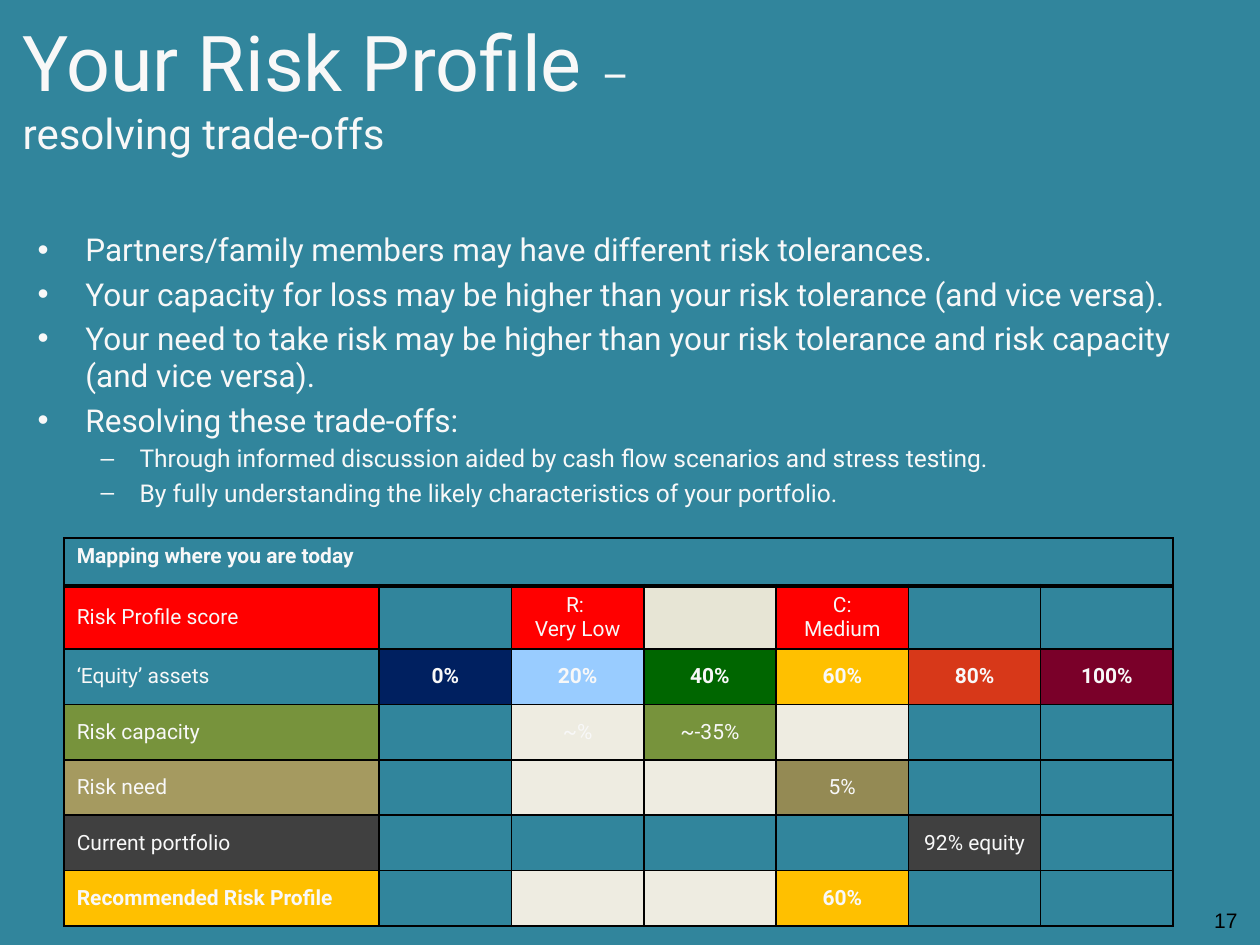
"""Build the risk profile slide with its bullets and mapping table."""
from lxml.etree import SubElement as Sub
from pptx import Presentation
from pptx.dml.color import RGBColor as Rgb
from pptx.enum.text import MSO_ANCHOR as Anchor, MSO_AUTO_SIZE as Auto, PP_ALIGN as Align
from pptx.oxml.ns import qn
from pptx.util import Inches, Pt

HUES = {
    "back": "31859C", "text": "F8F8F8", "black": "000000", "red": "FF0000",
    "sand": "E7E5D5", "cream": "EEECE1", "navy": "002060", "sky": "99CCFF",
    "green": "006600", "gold": "FFC000", "rust": "D73819", "wine": "7A0029",
    "moss": "77933C", "khaki": "A59A60", "olive": "948A54", "gray": "404040",
}

POINTS = [
    (0, "Partners/family members may have different risk tolerances."),
    (0, "Your capacity for loss may be higher than your risk tolerance (and vice versa)."),
    (0, "Your need to take risk may be higher than your risk tolerance and risk capacity (and vice versa)."),
    (0, "Resolving these trade-offs:"),
    (1, "Through informed discussion aided by cash flow scenarios and stress testing."),
    (1, "By fully understanding the likely characteristics of your portfolio."),
]
LEVELS = [("•", 0.38, 0.38, 18), ("–", 0.81, 0.31, 14)]

HEAD = "Mapping where you are today"
BOLD = {HEAD, "Recommended Risk Profile", "0%", "20%", "40%", "60%", "80%", "100%"}
NONE, CREAM = ("", None), ("", "cream")
ROWS = [
    [(HEAD, None)] + [NONE] * 6,
    [("Risk Profile score", "red"), NONE, ("R: \nVery Low", "red"), ("", "sand"),
     ("C:\nMedium", "red"), NONE, NONE],
    [("‘Equity’ assets", None), ("0%", "navy"), ("20%", "sky"), ("40%", "green"),
     ("60%", "gold"), ("80%", "rust"), ("100%", "wine")],
    [("Risk capacity", "moss"), NONE, ("~%", "cream"), ("~-35%", "moss"), CREAM, NONE, NONE],
    [("Risk need", "khaki"), NONE, CREAM, CREAM, ("5%", "olive"), NONE, NONE],
    [("Current portfolio", "gray"), NONE, NONE, NONE, NONE, ("92% equity", "gray"), NONE],
    [("Recommended Risk Profile", "gold"), NONE, CREAM, CREAM, ("60%", "gold"), NONE, NONE],
]
WIDTHS = [2.5] + [1.05] * 6
HEIGHTS = [0.38, 0.43] + [0.44] * 5


def write(par, text, size=12, font="Roboto", hue="text", bold=False, align=Align.LEFT):
    """Add a formatted run to a paragraph."""
    par.alignment = align
    run = par.add_run()
    run.text = text
    run.font.size, run.font.name, run.font.bold = Pt(size), font, bold
    run.font.color.rgb = Rgb.from_string(HUES[hue])


class Deck:
    """Hold the style and the current slide."""

    def __init__(self):
        """Start a deck with one title-only slide."""
        self.show = Presentation()
        self.show.slide_width, self.show.slide_height = Inches(10), Inches(7.5)
        self.slide = self.show.slides.add_slide(self.show.slide_layouts[5])
        self.paint(self.slide.background.fill, "back")

    def paint(self, fill, hue):
        """Fill with a named colour, or with none."""
        if hue:
            fill.solid()
            fill.fore_color.rgb = Rgb.from_string(HUES[hue])
        else:
            fill.background()

    def title(self, parts, x, y, w, h):
        """Place the title and write its (text, size) parts."""
        shape = self.slide.shapes.title
        shape.left, shape.top, shape.width, shape.height = map(Inches, (x, y, w, h))
        frame = shape.text_frame
        frame.auto_size, frame.vertical_anchor = Auto.NONE, Anchor.MIDDLE
        for text, size in parts:
            write(frame.paragraphs[0], text, size=size)

    def box(self, x, y, w, h):
        """Add a wrapping text box and return its frame."""
        frame = self.slide.shapes.add_textbox(*map(Inches, (x, y, w, h))).text_frame
        frame.word_wrap = True
        return frame

    def bullets(self, points, x, y, w, h):
        """Add a list of (level, text) points."""
        frame = self.box(x, y, w, h)
        for i, (level, text) in enumerate(points):
            par = frame.add_paragraph() if i else frame.paragraphs[0]
            mark, left, hang, size = LEVELS[level]
            par.level, par.space_before = level, Pt(size * 0.2)
            write(par, text, size=size)
            props = par._p.get_or_add_pPr()
            props.set("marL", str(Inches(left)))
            props.set("indent", str(-Inches(hang)))
            Sub(props, qn("a:buFont"), typeface="Arial")
            Sub(props, qn("a:buChar"), char=mark)

    def number(self, text, x, y, w, h):
        """Add the page number."""
        frame = self.box(x, y, w, h)
        frame.vertical_anchor = Anchor.MIDDLE
        write(frame.paragraphs[0], text, font="Arial", hue="black", align=Align.RIGHT)

    def edge(self, cell, **sizes):
        """Draw black cell borders of the given point sizes."""
        props = cell._tc.get_or_add_tcPr()
        for side in "LRTB":
            line = Sub(props, qn("a:ln" + side), w=str(Pt(sizes.get(side, 1))))
            Sub(Sub(line, qn("a:solidFill")), qn("a:srgbClr"), val=HUES["black"])

    def table(self, rows, x, y):
        """Add the mapping table with a merged heading row."""
        size = map(Inches, (x, y, sum(WIDTHS), sum(HEIGHTS)))
        grid = self.slide.shapes.add_table(len(rows), len(WIDTHS), *size).table
        grid.first_row = grid.horz_banding = False
        for col, width in zip(grid.columns, WIDTHS):
            col.width = Inches(width)
        for row, height in zip(grid.rows, HEIGHTS):
            row.height = Inches(height)
        for r, row in enumerate(rows):
            for c, (text, hue) in enumerate(row):
                cell = grid.cell(r, c)
                self.edge(cell, T=3 if r == 1 else 1, B=3 if r == 0 else 1)
                self.paint(cell.fill, hue)
                cell.vertical_anchor = Anchor.MIDDLE if r else Anchor.TOP
                if c == 5:
                    cell.margin_left = cell.margin_right = 0
                for i, line in enumerate(text.split("\n") if text else []):
                    frame = cell.text_frame
                    par = frame.add_paragraph() if i else frame.paragraphs[0]
                    write(par, line, bold=text in BOLD, align=Align.CENTER if c else Align.LEFT)
        grid.cell(0, 0).merge(grid.cell(0, len(WIDTHS) - 1))


def main():
    """Build and save the slide."""
    deck = Deck()
    deck.title([("Your Risk Profile ", 44), ("– resolving trade-offs", 24)], 0.08, 0.21, 6.02, 0.95)
    deck.bullets(POINTS, 0.2, 1.78, 9.53, 2.52)
    deck.table(ROWS, 0.51, 4.27)
    deck.number("17", 7.59, 7.1, 2.33, 0.4)
    deck.show.save("out.pptx")


if __name__ == "__main__":
    main()
